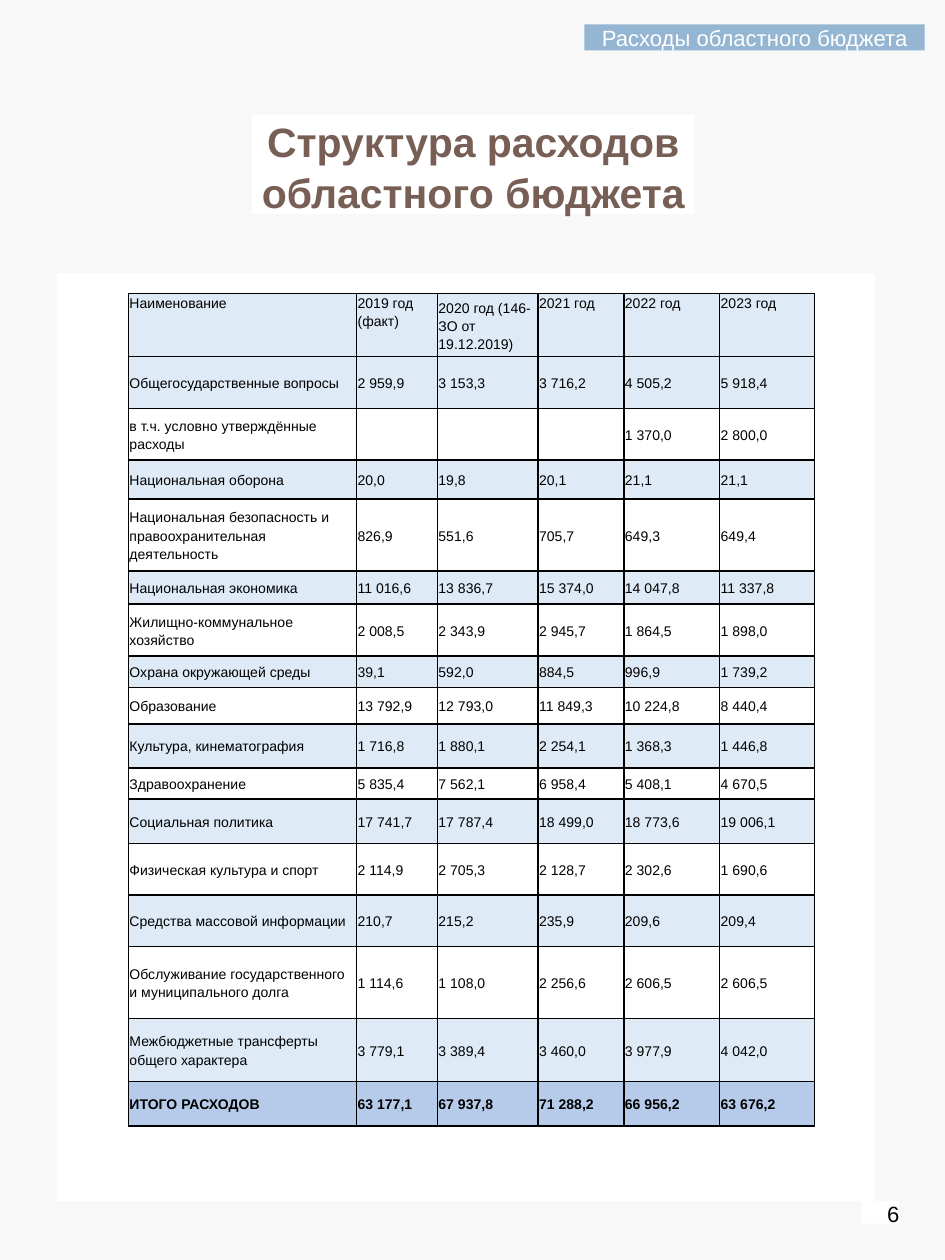
from lxml import etree
from pptx import Presentation
from pptx.dml.color import RGBColor
from pptx.enum.shapes import MSO_SHAPE
from pptx.enum.text import MSO_ANCHOR, MSO_AUTO_SIZE, PP_ALIGN
from pptx.oxml.ns import qn
from pptx.util import Cm, Pt

RECT = MSO_SHAPE.RECTANGLE
TOP, MIDDLE = MSO_ANCHOR.TOP, MSO_ANCHOR.MIDDLE
LEFT, CENTER, RIGHT = PP_ALIGN.LEFT, PP_ALIGN.CENTER, PP_ALIGN.RIGHT
NO_FIT = MSO_AUTO_SIZE.NONE

PAPER = RGBColor(0xF8, 0xF8, 0xF8)
WHITE = RGBColor(0xFF, 0xFF, 0xFF)
BLACK = RGBColor(0x00, 0x00, 0x00)
STEEL = RGBColor(0x94, 0xB6, 0xD2)
BROWN = RGBColor(0x77, 0x5F, 0x55)
PALE = RGBColor(0xDE, 0xEA, 0xF6)
BLUE = RGBColor(0xB6, 0xCB, 0xE9)

FONT = "Arial"
TITLE = "Структура расходов\vобластного бюджета"
COLS = [4.6, 1.63, 2.03, 1.73, 1.93, 1.91]

# Row height in cm, then the cells
ROWS = [
    (1.27, "Наименование", "2019 год (факт)", "2020 год (146-ЗО от 19.12.2019)",
     "2021 год", "2022 год", "2023 год"),
    (1.04, "Общегосударственные вопросы",
     "2 959,9", "3 153,3", "3 716,2", "4 505,2", "5 918,4"),
    (1.04, "в т.ч. условно утверждённые расходы",
     "", "", "", "1 370,0", "2 800,0"),
    (0.79, "Национальная оборона", "20,0", "19,8", "20,1", "21,1", "21,1"),
    (1.45, "Национальная безопасность и правоохранительная деятельность",
     "826,9", "551,6", "705,7", "649,3", "649,4"),
    (0.67, "Национальная экономика",
     "11 016,6", "13 836,7", "15 374,0", "14 047,8", "11 337,8"),
    (1.04, "Жилищно-коммунальное хозяйство",
     "2 008,5", "2 343,9", "2 945,7", "1 864,5", "1 898,0"),
    (0.64, "Охрана окружающей среды",
     "39,1", "592,0", "884,5", "996,9", "1 739,2"),
    (0.73, "Образование",
     "13 792,9", "12 793,0", "11 849,3", "10 224,8", "8 440,4"),
    (0.89, "Культура, кинематография",
     "1 716,8", "1 880,1", "2 254,1", "1 368,3", "1 446,8"),
    (0.63, "Здравоохранение",
     "5 835,4", "7 562,1", "6 958,4", "5 408,1", "4 670,5"),
    (0.89, "Социальная политика",
     "17 741,7", "17 787,4", "18 499,0", "18 773,6", "19 006,1"),
    (1.04, "Физическая культура и спорт",
     "2 114,9", "2 705,3", "2 128,7", "2 302,6", "1 690,6"),
    (1.04, "Средства массовой информации",
     "210,7", "215,2", "235,9", "209,6", "209,4"),
    (1.45, "Обслуживание государственного и муниципального долга",
     "1 114,6", "1 108,0", "2 256,6", "2 606,5", "2 606,5"),
    (1.27, "Межбюджетные трансферты общего характера",
     "3 779,1", "3 389,4", "3 460,0", "3 977,9", "4 042,0"),
    (0.9, "ИТОГО РАСХОДОВ",
     "63 177,1", "67 937,8", "71 288,2", "66 956,2", "63 676,2"),
]


def set_text(frame, text, size, color, align=LEFT, bold=False, space=1.0):
    frame.text = text
    for para in frame.paragraphs:
        para.alignment = align
        para.line_spacing = space
        for run in para.runs:
            font = run.font
            font.name, font.size, font.bold = FONT, Pt(size), bold
            font.color.rgb = color


def set_fill(item, color):
    item.fill.solid()
    item.fill.fore_color.rgb = color


def trim(frame):
    """Drop the margins and pin the text to the top."""
    frame.margin_left = frame.margin_right = 0
    frame.margin_top = frame.margin_bottom = 0
    frame.vertical_anchor = TOP
    frame.auto_size = NO_FIT
    frame.word_wrap = True


def add_box(slide, left, top, width, height, color):
    box = slide.shapes.add_shape(RECT, Cm(left), Cm(top), Cm(width), Cm(height))
    box.shadow.inherit = False
    box.line.fill.background()
    set_fill(box, color)
    trim(box.text_frame)
    return box


def add_title(slide):
    title = slide.shapes.title
    title.left, title.top = Cm(5.08), Cm(2.31)
    title.width, title.height = Cm(8.92), Cm(2.01)
    set_fill(title, WHITE)
    trim(title.text_frame)
    set_text(title.text_frame, TITLE, 23.4, BROWN, CENTER, True, 1.04)


def add_edges(cell):
    """Draw a 1 pt black line on each side; lines go before the fill."""
    props = cell._tc.get_or_add_tcPr()
    for i, side in enumerate(("a:lnL", "a:lnR", "a:lnT", "a:lnB")):
        line = etree.Element(qn(side), w=str(Pt(1)))
        solid = etree.SubElement(line, qn("a:solidFill"))
        etree.SubElement(solid, qn("a:srgbClr"), val=str(BLACK))
        props.insert(i, line)


def row_color(row):
    if row == len(ROWS) - 1:
        return BLUE
    return PALE if row == 0 or row % 2 else WHITE


def fill_cell(cell, text, row, col):
    cell.margin_left = cell.margin_right = Cm(0.02)
    cell.margin_top = cell.margin_bottom = 0
    cell.vertical_anchor = TOP if row == 0 and col != 2 else MIDDLE
    set_fill(cell, row_color(row))
    add_edges(cell)
    total = row == len(ROWS) - 1
    set_text(cell.text_frame, text, 8, BLACK, bold=total, space=1.15)


def add_grid(slide):
    high = sum(row[0] for row in ROWS)
    frame = slide.shapes.add_table(len(ROWS), len(COLS), Cm(2.59), Cm(5.92),
                                   Cm(sum(COLS)), Cm(high))
    table = frame.table
    table.first_row = table.horz_banding = False
    for col, width in enumerate(COLS):
        table.columns[col].width = Cm(width)
    for row, (height, *texts) in enumerate(ROWS):
        table.rows[row].height = Cm(height)
        for col, text in enumerate(texts):
            fill_cell(table.cell(row, col), text, row, col)


def main():
    deck = Presentation()
    deck.slide_width, deck.slide_height = Cm(19.05), Cm(25.4)
    slide = deck.slides.add_slide(deck.slide_layouts[5])
    set_fill(slide.background, PAPER)

    # Section label and title
    label = add_box(slide, 11.78, 0.49, 6.86, 0.53, STEEL)
    set_text(label.text_frame, "Расходы областного бюджета", 12.6, WHITE, CENTER)
    add_title(slide)

    # Panel with the budget table
    add_box(slide, 1.14, 5.51, 16.51, 18.71, WHITE)
    add_grid(slide)

    # Page number
    page = add_box(slide, 17.37, 24.21, 0.76, 0.46, WHITE)
    set_text(page.text_frame, "6", 12.6, BLACK, RIGHT)

    deck.save("out.pptx")


if __name__ == "__main__":
    main()
